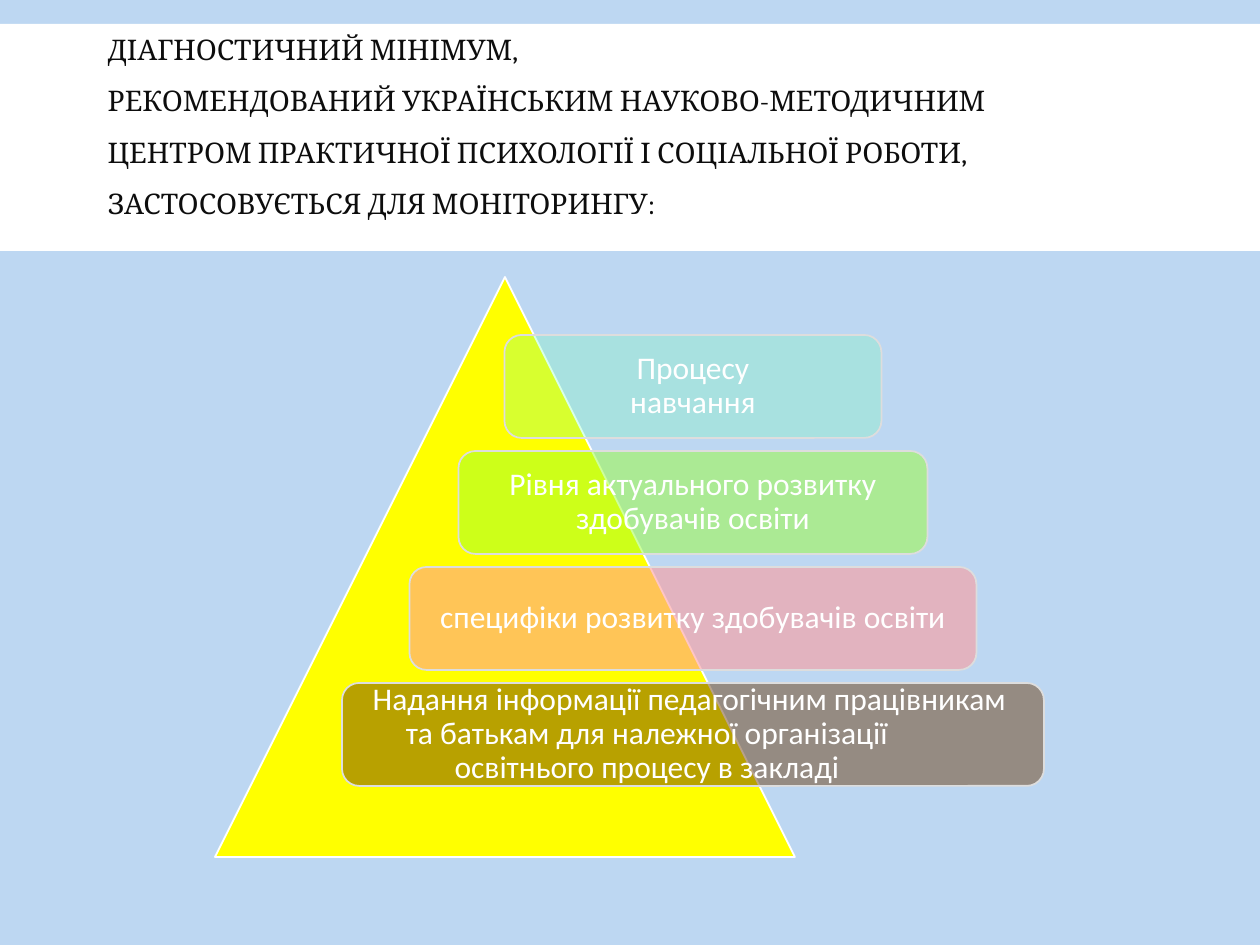
from pptx import Presentation
from pptx.dml.color import RGBColor
from pptx.enum.shapes import MSO_SHAPE
from pptx.enum.text import MSO_ANCHOR, MSO_AUTO_SIZE, PP_ALIGN
from pptx.oxml.ns import qn
from pptx.util import Pt
from lxml.etree import SubElement

PX = 914400 / 126
COLORS = {
    "background": "BDD7F2",
    "white": "FFFFFF",
    "title": "0D0D0D",
    "pyramid": "FFFF00",
    "border": "DDDDDD",
    "learning": "71FFB1",
    "level": "99FF33",
    "specifics": "FF9999",
    "information": "663300",
}
TITLE = "\v".join([
    "ДІАГНОСТИЧНИЙ МІНІМУМ,",
    "РЕКОМЕНДОВАНИЙ УКРАЇНСЬКИМ НАУКОВО-МЕТОДИЧНИМ",
    "ЦЕНТРОМ ПРАКТИЧНОЇ ПСИХОЛОГІЇ І СОЦІАЛЬНОЇ РОБОТИ,",
    "ЗАСТОСОВУЄТЬСЯ ДЛЯ МОНІТОРИНГУ:",
])
CARDS = [
    ("learning", 27, 377, [("Процесу\vнавчання", 0)]),
    ("level", 49, 469, [("Рівня актуального розвитку\vздобувачів освіти", 0)]),
    ("specifics", 57, 567, [("специфіки розвитку здобувачів освіти", 0)]),
    ("information", 46, 702, [
        ("Надання інформації педагогічним працівникам", 7),
        ("та батькам для належної організації", 92),
        ("освітнього процесу в закладі", 0),
    ]),
]
CARD_CENTER, CARD_TOP, CARD_PITCH, CARD_HEIGHT = 693, 335, 116, 103


def px(value):
    """Turn pixels into EMU."""
    return round(value * PX)


def color(name):
    """Look up a named colour."""
    return RGBColor.from_string(COLORS[name])


def apply(target, values):
    """Set every attribute in a dict of format values."""
    for name, value in values.items():
        setattr(target, name, value)


def format_text(para, font, size, color_name, **layout):
    """Format a paragraph and its font."""
    apply(para, layout)
    apply(para.font, {"name": font, "size": Pt(size)})
    para.font.color.rgb = color(color_name)


def add_figure(page, kind, frame, fill, line=None, opacity=100):
    """Add a filled preset shape with an optional outline."""
    shape = page.shapes.add_shape(kind, *map(px, frame))
    shape.shadow.inherit = False
    shape.fill.solid()
    shape.fill.fore_color.rgb = color(fill)
    if opacity < 100:
        fill_color = shape.element.spPr.find(qn("a:solidFill"))[0]
        SubElement(fill_color, qn("a:alpha"), val=str(opacity * 1000))
    if line:
        shape.line.color.rgb = color(line)
        shape.line.width = Pt(1)
    else:
        shape.line.fill.background()
    return shape


def add_title(page):
    """Place the title on its white band."""
    title = page.shapes.title
    band = add_figure(page, MSO_SHAPE.RECTANGLE, (0, 24, 1260, 227), "white")
    title.element.addprevious(band.element)
    apply(title, {"left": px(95), "top": px(39),
                  "width": px(1071), "height": px(208)})
    frame = title.text_frame
    frame.text = TITLE
    apply(frame, {"word_wrap": True, "auto_size": MSO_AUTO_SIZE.NONE,
                  "vertical_anchor": MSO_ANCHOR.MIDDLE, "margin_bottom": px(57)})
    format_text(frame.paragraphs[0], "Cambria", 16.2, "title",
                alignment=PP_ALIGN.LEFT, line_spacing=1.5)


def add_card(page, index, fill, opacity, width, lines):
    """Add one centred translucent card of the pyramid."""
    frame = (CARD_CENTER - width / 2, CARD_TOP + index * CARD_PITCH,
             width, CARD_HEIGHT)
    card = add_figure(page, MSO_SHAPE.ROUNDED_RECTANGLE, frame,
                      fill, "border", opacity)
    box = card.text_frame
    sides = ("left", "top", "right", "bottom")
    apply(box, {f"margin_{side}": px(14) for side in sides})
    apply(box, {"word_wrap": True, "vertical_anchor": MSO_ANCHOR.MIDDLE})
    box.text = "\n".join(text for text, _ in lines)
    for para, (_, indent) in zip(box.paragraphs, lines):
        format_text(para, "Calibri", 18, "white",
                    alignment=PP_ALIGN.CENTER, line_spacing=0.9)
        if indent:
            para._p.get_or_add_pPr().set("marR", str(px(indent)))


def main():
    """Build and save the slide."""
    deck = Presentation()
    apply(deck, {"slide_width": px(1260), "slide_height": px(945)})
    page = deck.slides.add_slide(deck.slide_layouts[5])
    page.background.fill.solid()
    page.background.fill.fore_color.rgb = color("background")
    add_title(page)
    add_figure(page, MSO_SHAPE.ISOSCELES_TRIANGLE, (215, 277, 580, 580),
               "pyramid", "white")
    for index, card in enumerate(CARDS):
        add_card(page, index, *card)
    deck.save("out.pptx")


if __name__ == "__main__":
    main()
